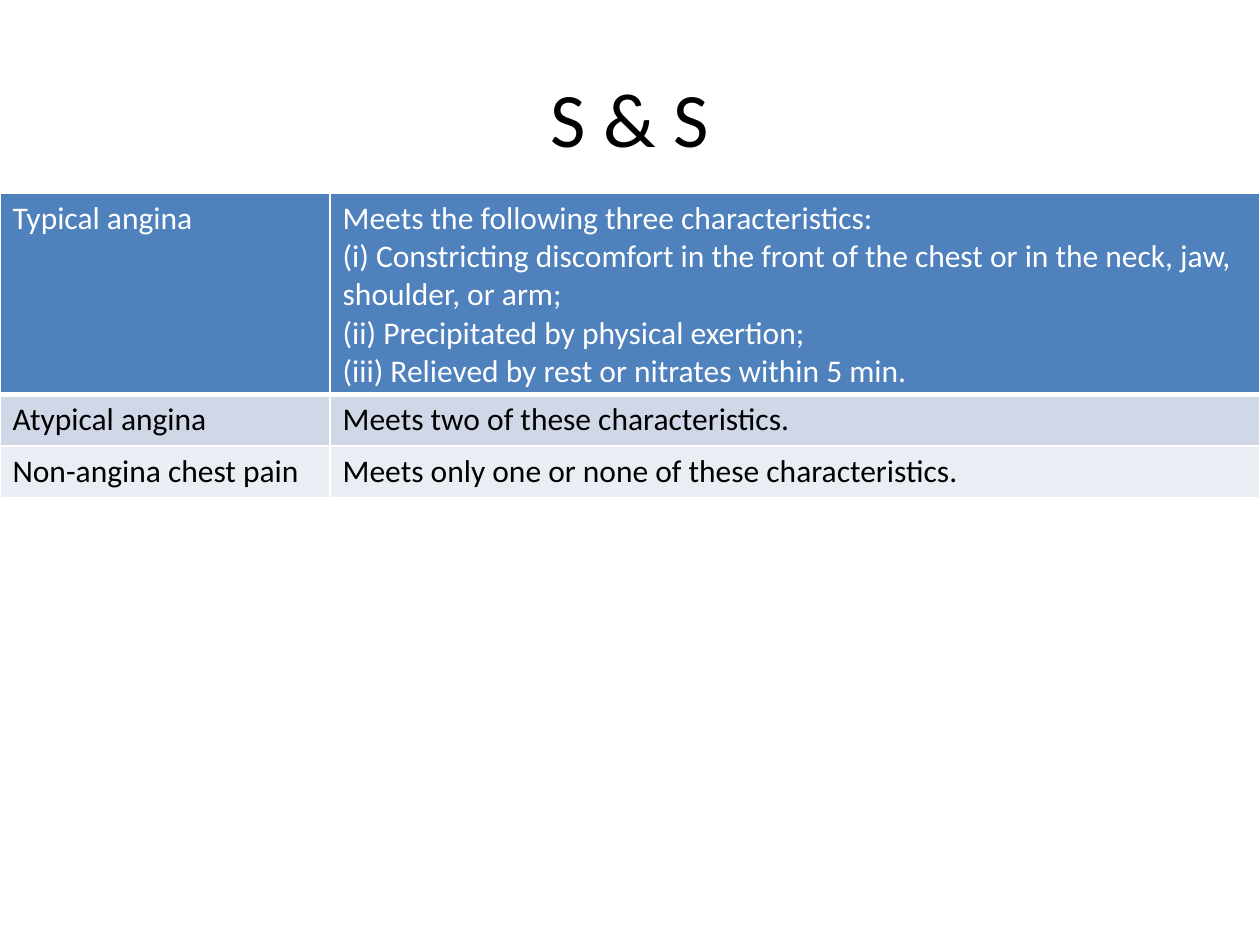
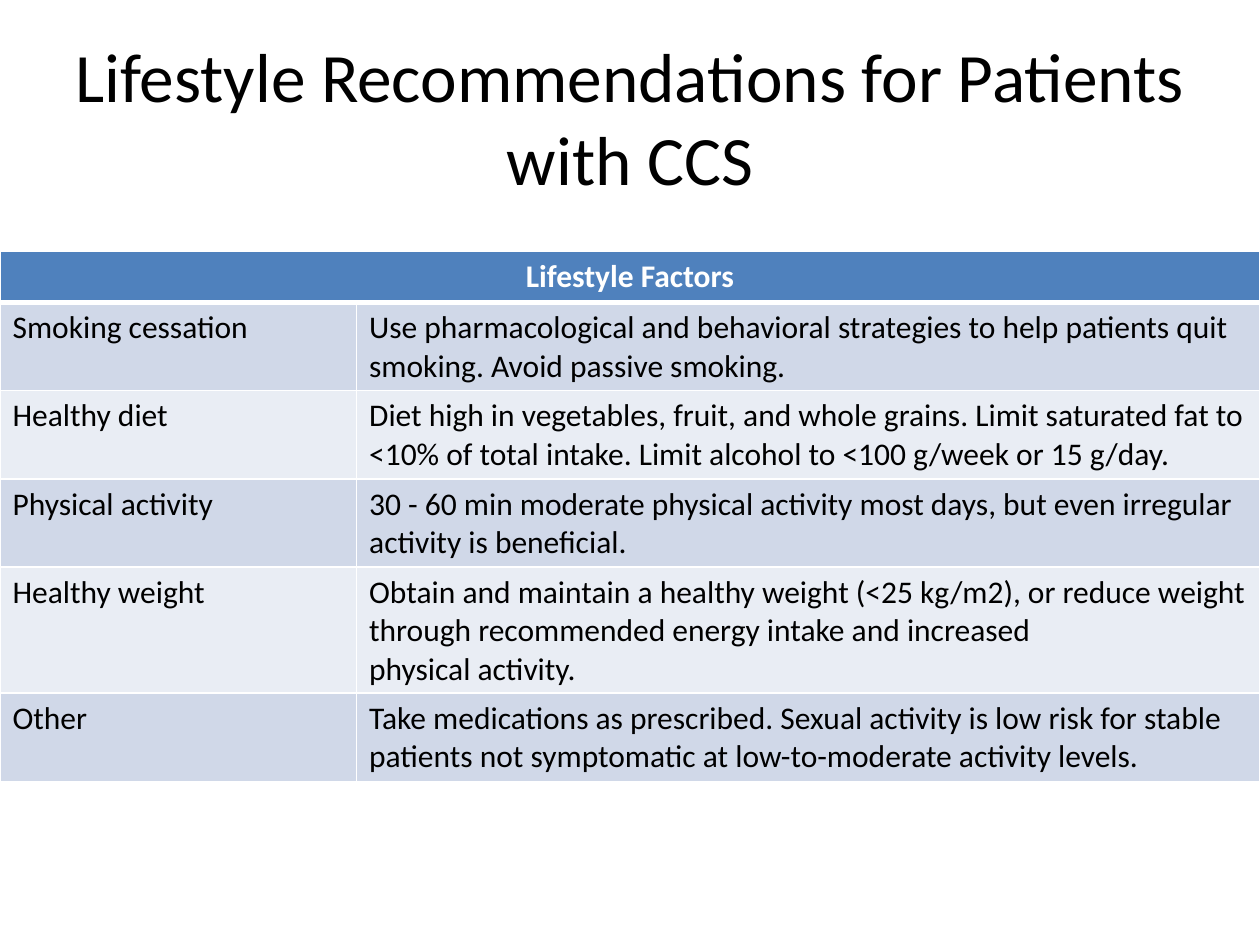
import pptx
import pptx.util
import pptx.dml.color
import pptx.enum.text
import pptx.oxml
import pptx.oxml.ns

Inches, Pt = pptx.util.Inches, pptx.util.Pt
RGBColor = pptx.dml.color.RGBColor
CENTER = pptx.enum.text.PP_ALIGN.CENTER

# Content: a row with one text spans the whole table
SLIDES = [
    {"title": "S & S", "title_size": 44, "top": 1.53, "first_column": 0.262,
     "rows": [
         ("Typical angina",
          "Meets the following three characteristics:\n"
          "(i) Constricting discomfort in the front of the chest or in the neck, "
          "jaw, shoulder, or arm;\n"
          "(ii) Precipitated by physical exertion;\n"
          "(iii) Relieved by rest or nitrates within 5 min."),
         ("Atypical angina", "Meets two of these characteristics."),
         ("Non-angina chest pain",
          "Meets only one or none of these characteristics."),
     ]},
    {"title": "Lifestyle Recommendations for Patients with CCS",
     "title_size": 39.6, "top": 1.99, "first_column": 0.283,
     "rows": [
         ("Lifestyle Factors",),
         ("Smoking cessation",
          "Use pharmacological and behavioral strategies to help patients quit "
          "smoking. Avoid passive smoking."),
         ("Healthy diet",
          "Diet high in vegetables, fruit, and whole grains. Limit saturated fat "
          "to <10% of total intake. Limit alcohol to <100 g/week or 15 g/day."),
         ("Physical activity",
          "30 - 60 min moderate physical activity most days, but even irregular "
          "activity is beneficial."),
         ("Healthy weight",
          "Obtain and maintain a healthy weight (<25 kg/m2), or reduce weight "
          "through recommended energy intake and increased\nphysical activity."),
         ("Other",
          "Take medications as prescribed. Sexual activity is low risk for stable "
          "patients not symptomatic at low-to-moderate activity levels."),
     ]},
]

# Shared style
FONT = "Calibri"
BLACK = RGBColor(0x00, 0x00, 0x00)
WHITE = RGBColor(0xFF, 0xFF, 0xFF)
HEADER = RGBColor(0x4F, 0x81, 0xBD)
BANDS = [RGBColor(0xE9, 0xED, 0xF4), RGBColor(0xD0, 0xD8, 0xE8)]
WIDTH, HEIGHT = Inches(10), Inches(7.5)
ROW_HEIGHT = Inches(0.41)  # least height; rows grow with their text


def set_text(tf, text, size, color, bold=False, align=None):
    tf.text = text
    for p in tf.paragraphs:
        p.alignment = align
        p.font.name, p.font.size, p.font.bold = FONT, Pt(size), bold
        p.font.color.rgb = color


def add_title(s, text, size):
    tf = s.shapes.add_textbox(WIDTH * 0.05, HEIGHT * 0.04,
                              WIDTH * 0.9, HEIGHT / 6).text_frame
    tf.word_wrap = True
    tf.vertical_anchor = pptx.enum.text.MSO_ANCHOR.MIDDLE
    set_text(tf, text, size, BLACK, align=CENTER)


def set_borders(cell, row):
    widths = {"L": 1, "R": 1, "T": 3 if row == 1 else 1, "B": 3 if row == 0 else 1}
    for side, width in widths.items():
        cell._tc.get_or_add_tcPr().append(pptx.oxml.parse_xml(
            f'<a:ln{side} {pptx.oxml.ns.nsdecls("a")} w="{Pt(width)}"><a:solidFill>'
            f'<a:srgbClr val="{WHITE}"/></a:solidFill></a:ln{side}>'))


def add_table(s, rows, top, first_column):
    table = s.shapes.add_table(len(rows), 2, 0, Inches(top), WIDTH,
                               ROW_HEIGHT * len(rows)).table
    for column, share in zip(table.columns, (first_column, 1 - first_column)):
        column.width = round(WIDTH * share)
    for i, texts in enumerate(rows):
        table.rows[i].height = ROW_HEIGHT
        spans = len(texts) == 1
        if spans:
            table.cell(i, 0).merge(table.cell(i, 1))
        for j in range(2):
            cell = table.cell(i, j)
            set_borders(cell, i)
            cell.fill.solid()
            cell.fill.fore_color.rgb = HEADER if i == 0 else BANDS[i % 2]
            if j < len(texts):
                set_text(cell.text_frame, texts[j], 18, WHITE if i == 0 else BLACK,
                         spans, CENTER if spans else None)


def main():
    prs = pptx.Presentation()
    prs.slide_width, prs.slide_height = WIDTH, HEIGHT
    for content in SLIDES:
        s = prs.slides.add_slide(prs.slide_layouts[6])
        add_title(s, content["title"], content["title_size"])
        add_table(s, content["rows"], content["top"], content["first_column"])
    prs.save("out.pptx")


if __name__ == "__main__":
    main()
